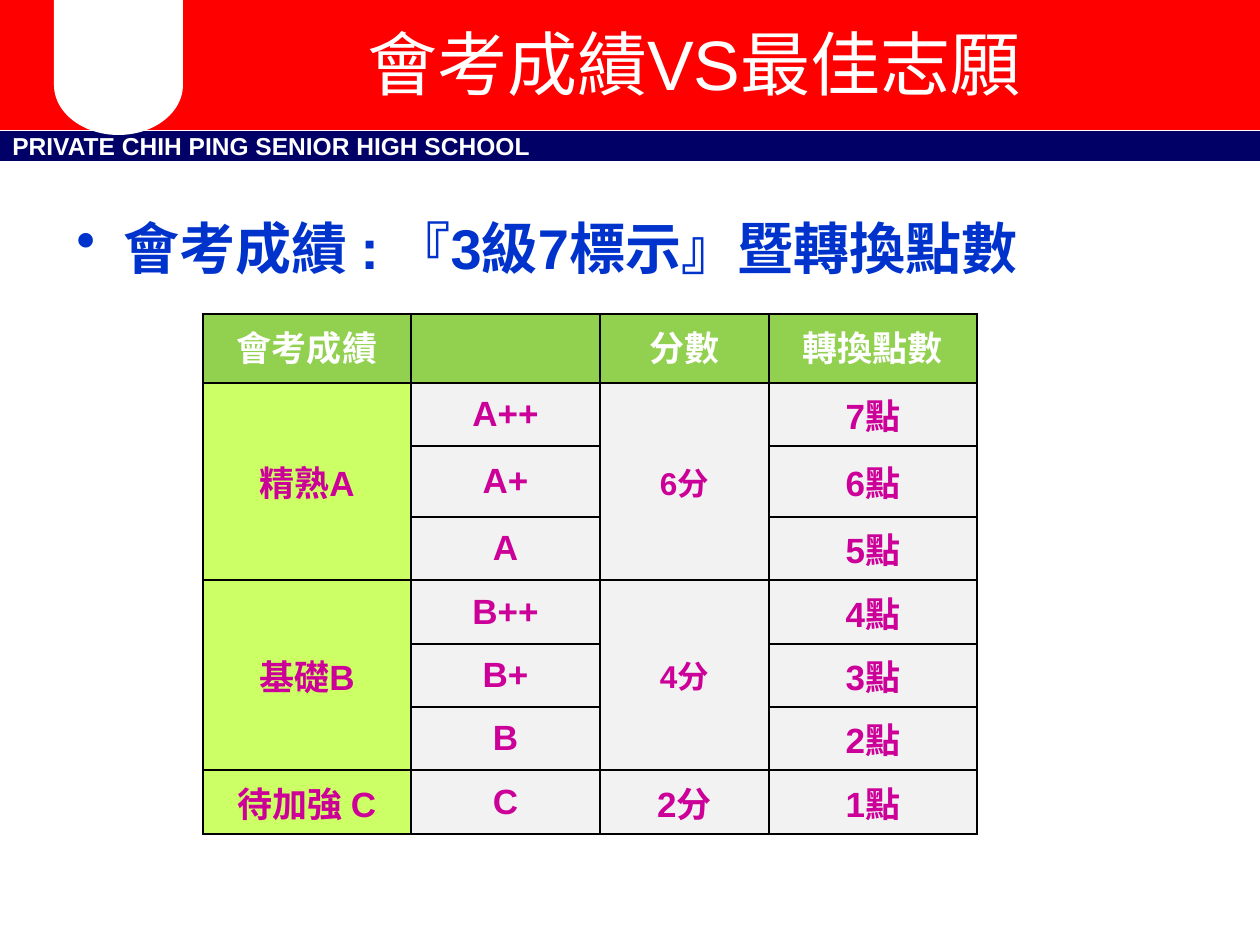
import pptx
import pptx.util
import pptx.dml.color
import pptx.enum.shapes
import pptx.enum.text
import pptx.oxml.ns
from lxml import etree

PX = 914400 / 126
SHAPE = pptx.enum.shapes.MSO_SHAPE
ALIGN = pptx.enum.text.PP_ALIGN
ANCHOR = pptx.enum.text.MSO_ANCHOR

SCHOOL = "PRIVATE CHIH PING SENIOR HIGH SCHOOL"
TITLE = "會考成績VS最佳志願"
TOPIC = "會考成績 : 『3級7標示』暨轉換點數"

# None marks a cell covered by the one above it
GRADES = [
    ("會考成績", "", "分數", "轉換點數"),
    ("精熟A", "A++", "6分", "7點"),
    (None, "A+", None, "6點"),
    (None, "A", None, "5點"),
    ("基礎B", "B++", "4分", "4點"),
    (None, "B+", None, "3點"),
    (None, "B", None, "2點"),
    ("待加強 C", "C", "2分", "1點"),
]
COLUMNS = [208, 189, 169, 208]
ROWS = [69, 63, 71, 63, 64, 63, 63, 64]
TABLE_LEFT, TABLE_TOP = 203, 314

# kind, left, top, width, height, fill
BANNER = [
    (SHAPE.RECTANGLE, 0, 131, 1260, 30, "000066"),
    (SHAPE.RECTANGLE, 0, 0, 1260, 125, "FF0000"),
    (SHAPE.RECTANGLE, 54, -4, 129, 89, "FFFFFF"),
    (SHAPE.OVAL, 54, 35, 129, 100, "FFFFFF"),
]


def px(*lengths):
    return [pptx.util.Emu(round(length * PX)) for length in lengths]


def rgb(color):
    return pptx.dml.color.RGBColor.from_string(color)


def write(frame, text, size, color, bold=False, align=ALIGN.LEFT):
    frame.text = text
    paragraph = frame.paragraphs[0]
    paragraph.alignment = align
    for run in paragraph.runs:
        run.font.name = "Arial"
        run.font.size = pptx.util.Pt(size)
        run.font.bold = bold
        run.font.color.rgb = rgb(color)
    return paragraph


def add_bullet(paragraph, indent):
    properties = paragraph._p.get_or_add_pPr()
    properties.set("marL", str(indent))
    properties.set("indent", str(-indent))
    bullet = etree.SubElement(properties, pptx.oxml.ns.qn("a:buChar"))
    bullet.set("char", "•")


def add_borders(cell):
    fill = cell._tc.get_or_add_tcPr()[0]
    for side in ("lnL", "lnR", "lnT", "lnB"):
        line = etree.Element(pptx.oxml.ns.qn("a:" + side), w="12700")
        solid = etree.SubElement(line, pptx.oxml.ns.qn("a:solidFill"))
        etree.SubElement(solid, pptx.oxml.ns.qn("a:srgbClr"), val="000000")
        fill.addprevious(line)


def add_banner(slide):
    parts = []
    for kind, left, top, width, height, color in BANNER:
        part = slide.shapes.add_shape(kind, *px(left, top, width, height))
        part.shadow.inherit = False
        part.fill.solid()
        part.fill.fore_color.rgb = rgb(color)
        part.line.fill.background()
        parts.append(part)
    school_bar, title_bar = parts[:2]
    title_bar.line.color.rgb = rgb("FF0000")
    title_bar.line.width = pptx.util.Pt(6)
    school_bar.text_frame.word_wrap = False
    school_bar.text_frame.vertical_anchor = ANCHOR.MIDDLE
    write(school_bar.text_frame, SCHOOL, 14, "FFFFFF", bold=True)


def add_text(slide, box, anchor, *style, **options):
    frame = slide.shapes.add_textbox(*px(*box)).text_frame
    frame.word_wrap = True
    frame.vertical_anchor = anchor
    return write(frame, *style, **options)


def add_grades(slide):
    table = slide.shapes.add_table(
        len(ROWS), len(COLUMNS),
        *px(TABLE_LEFT, TABLE_TOP, sum(COLUMNS), sum(ROWS))).table
    for column, width in zip(table.columns, px(*COLUMNS)):
        column.width = width
    for row, height in zip(table.rows, px(*ROWS)):
        row.height = height

    for r, grade in enumerate(GRADES):
        for c, text in enumerate(grade):
            cell = table.cell(r, c)
            header = r == 0
            cell.fill.solid()
            cell.fill.fore_color.rgb = rgb(
                "92D050" if header else "CCFF66" if c == 0 else "F2F2F2")
            add_borders(cell)
            if text is None:
                continue
            cell.vertical_anchor = ANCHOR.TOP if header else ANCHOR.MIDDLE
            last = r
            while last + 1 < len(GRADES) and GRADES[last + 1][c] is None:
                last += 1
            if last > r:
                cell.merge(table.cell(last, c))
            size = 18 if c == 2 and last > r else 20
            write(cell.text_frame, text, size,
                  "FFFFFF" if header else "CC0099", True, ALIGN.CENTER)


def main():
    deck = pptx.Presentation()
    deck.slide_width, deck.slide_height = px(1260, 945)
    slide = deck.slides.add_slide(deck.slide_layouts[6])

    add_banner(slide)
    add_text(slide, (193, 0, 1002, 125), ANCHOR.MIDDLE,
             TITLE, 40, "FFFFFF", align=ALIGN.CENTER)
    topic = add_text(slide, (64, 207, 1134, 624), ANCHOR.TOP,
                     TOPIC, 32, "0033CC", bold=True)
    add_bullet(topic, px(47)[0])
    add_grades(slide)

    deck.save("out.pptx")


if __name__ == "__main__":
    main()
